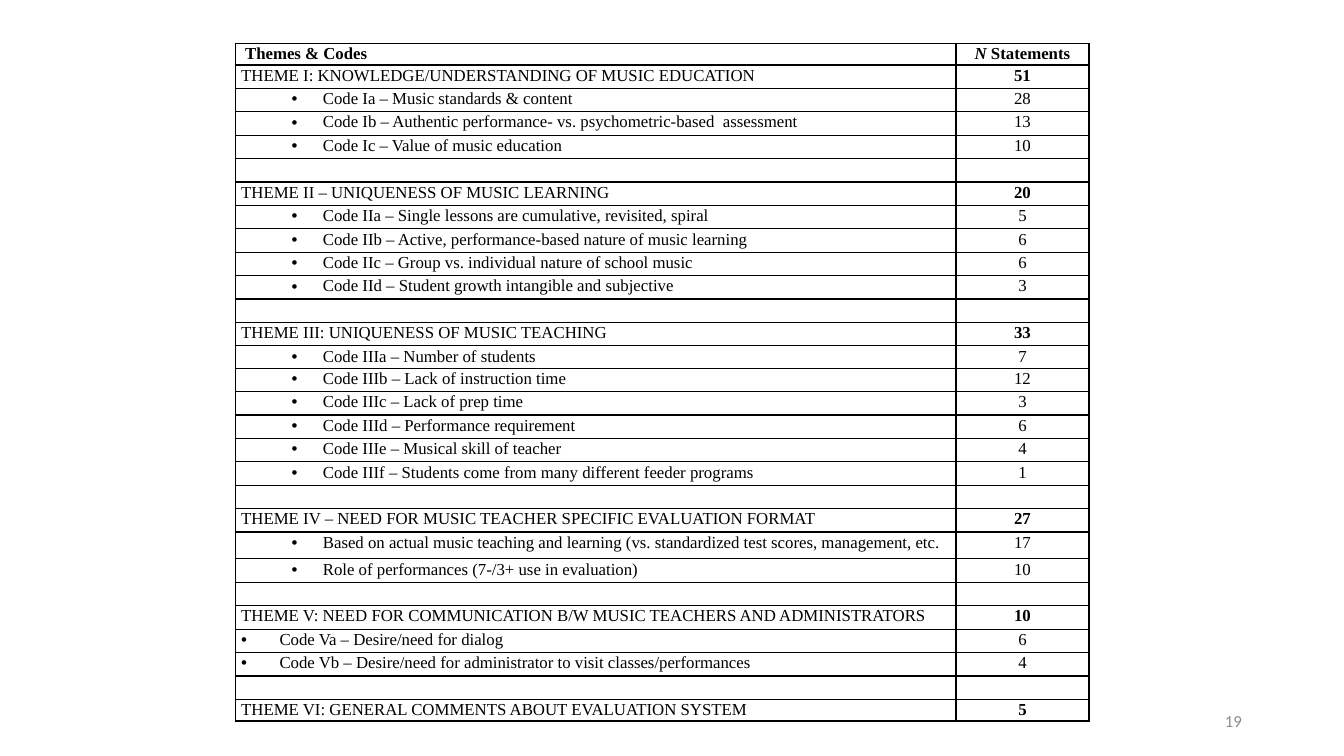
from lxml.etree import SubElement as Sub
from pptx import Presentation
from pptx.dml.color import RGBColor as Rgb
from pptx.enum.text import MSO_ANCHOR as Anchor, PP_ALIGN as Align
from pptx.oxml import parse_xml
from pptx.oxml.ns import nsdecls, qn
from pptx.util import Inches, Pt

INDENT = {"code": (1, 0.81, -0.31), "flush": (0, 0.38, -0.38)}

# Each entry: kind, label, count
ROWS = [
    ("head", " Themes & Codes", "N Statements"),
    ("theme", "THEME I: KNOWLEDGE/UNDERSTANDING OF MUSIC EDUCATION", "51"),
    ("code", "Code Ia – Music standards & content", "28"),
    ("code", "Code Ib – Authentic performance- vs. psychometric-based  assessment", "13"),
    ("code", "Code Ic – Value of music education", "10"),
    ("gap", "", ""),
    ("theme", "THEME II – UNIQUENESS OF MUSIC LEARNING", "20"),
    ("code", "Code IIa – Single lessons are cumulative, revisited, spiral", "5"),
    ("code", "Code IIb – Active, performance-based nature of music learning", "6"),
    ("code", "Code IIc – Group vs. individual nature of school music", "6"),
    ("code", "Code IId – Student growth intangible and subjective", "3"),
    ("gap", "", ""),
    ("theme", "THEME III: UNIQUENESS OF MUSIC TEACHING", "33"),
    ("code", "Code IIIa – Number of students", "7"),
    ("code", "Code IIIb – Lack of instruction time", "12"),
    ("code", "Code IIIc – Lack of prep time", "3"),
    ("code", "Code IIId – Performance requirement", "6"),
    ("code", "Code IIIe – Musical skill of teacher", "4"),
    ("code", "Code IIIf – Students come from many different feeder programs", "1"),
    ("gap", "", ""),
    ("theme", "THEME IV – NEED FOR MUSIC TEACHER SPECIFIC EVALUATION FORMAT", "27"),
    ("code", "Based on actual music teaching and learning "
             "(vs. standardized test scores, management, etc.", "17"),
    ("code", "Role of performances (7-/3+ use in evaluation)", "10"),
    ("gap", "", ""),
    ("theme", "THEME V: NEED FOR COMMUNICATION B/W MUSIC TEACHERS AND ADMINISTRATORS", "10"),
    ("flush", "Code Va – Desire/need for dialog", "6"),
    ("flush", "Code Vb – Desire/need for administrator to visit classes/performances", "4"),
    ("gap", "", ""),
    ("theme", "THEME VI: GENERAL COMMENTS ABOUT EVALUATION SYSTEM", "5"),
]

# Row heights in percent of the slide; all others take the standard one
STEP = 3.1
ODD = {0: 2.6, 13: 2.95, 21: 3.55, 28: 2.6}


def tint(code):
    return Rgb.from_string(code)


class Page:
    font, size, ink, grey = "Times New Roman", 12, "000000", "8C8C8C"

    def __init__(self, deck):
        self.wide, self.high = deck.slide_width, deck.slide_height
        self.slide = deck.slides.add_slide(deck.slide_layouts[6])

    def x(self, part):
        return int(self.wide * part / 100)

    def y(self, part):
        return int(self.high * part / 100)

    def style(self, run, font, color, bold=False):
        run.font.name, run.font.size = font, Pt(self.size)
        run.font.bold = bold
        run.font.color.rgb = tint(color)

    def note(self, text, left, top, width, height):
        box = self.slide.shapes.add_textbox(
            self.x(left), self.y(top), self.x(width), self.y(height))
        frame = box.text_frame
        frame.word_wrap = True
        frame.vertical_anchor = Anchor.MIDDLE
        frame.text = text
        para = frame.paragraphs[0]
        para.alignment = Align.RIGHT
        self.style(para.runs[0], "Calibri", self.grey)

    def bullet(self, para, kind):
        para.level, left, hang = INDENT[kind]
        props = para._p.get_or_add_pPr()
        props.set("marL", str(Inches(left)))
        props.set("indent", str(Inches(hang)))
        Sub(props, qn("a:buFont")).set("typeface", "Arial")
        Sub(props, qn("a:buChar")).set("char", "•")

    def border(self, cell):
        props = cell._tc.get_or_add_tcPr()
        for spot, side in enumerate("LRTB"):
            props.insert(spot, parse_xml(
                f'<a:ln{side} {nsdecls("a")} w="{Pt(1)}"><a:solidFill>'
                f'<a:srgbClr val="{self.ink}"/></a:solidFill></a:ln{side}>'))

    def cell(self, cell, text, bold=False, align=Align.LEFT, kind=None):
        cell.margin_left = cell.margin_right = Inches(0.06)
        cell.margin_top = cell.margin_bottom = 0
        cell.fill.background()
        self.border(cell)
        cell.text_frame.text = text
        para = cell.text_frame.paragraphs[0]
        para.alignment, para.line_spacing = align, 1.07
        if kind in INDENT:
            self.bullet(para, kind)
        for run in para.runs:
            self.style(run, self.font, self.ink, bold)
        if not text:
            # Keeps a blank row from growing to the default text size
            Sub(para._p, qn("a:endParaRPr")).set("sz", str(self.size * 100))
        return para

    def table(self, rows, left, top, cols):
        tall = [ODD.get(n, STEP) for n in range(len(rows))]
        grid = self.slide.shapes.add_table(
            len(rows), len(cols), self.x(left), self.y(top),
            self.x(sum(cols)), self.y(sum(tall))).table
        grid.first_row = grid.horz_banding = False
        for col, width in zip(grid.columns, cols):
            col.width = self.x(width)
        for n, (kind, label, count) in enumerate(rows):
            grid.rows[n].height = self.y(tall[n])
            self.cell(grid.cell(n, 0), label, kind == "head", kind=kind)
            para = self.cell(grid.cell(n, 1), count,
                             kind in ("head", "theme"), Align.CENTER)
            if kind == "head":
                self.slant(para)

    def slant(self, para):
        # Italic first letter, upright remainder
        first = para.runs[0]
        word = first.text
        first.text, first.font.italic = word[:1], True
        rest = para.add_run()
        rest.text = word[1:]
        self.style(rest, self.font, self.ink, True)


def main():
    deck = Presentation()
    deck.slide_width, deck.slide_height = Inches(13.33), Inches(7.5)
    page = Page(deck)
    # Slide number
    page.note("19", 70.65, 92.7, 22.5, 5.33)
    # Themes and codes with statement counts
    page.table(ROWS, 17.5, 5.73, (53.63, 9.9))
    deck.save("out.pptx")


if __name__ == "__main__":
    main()
